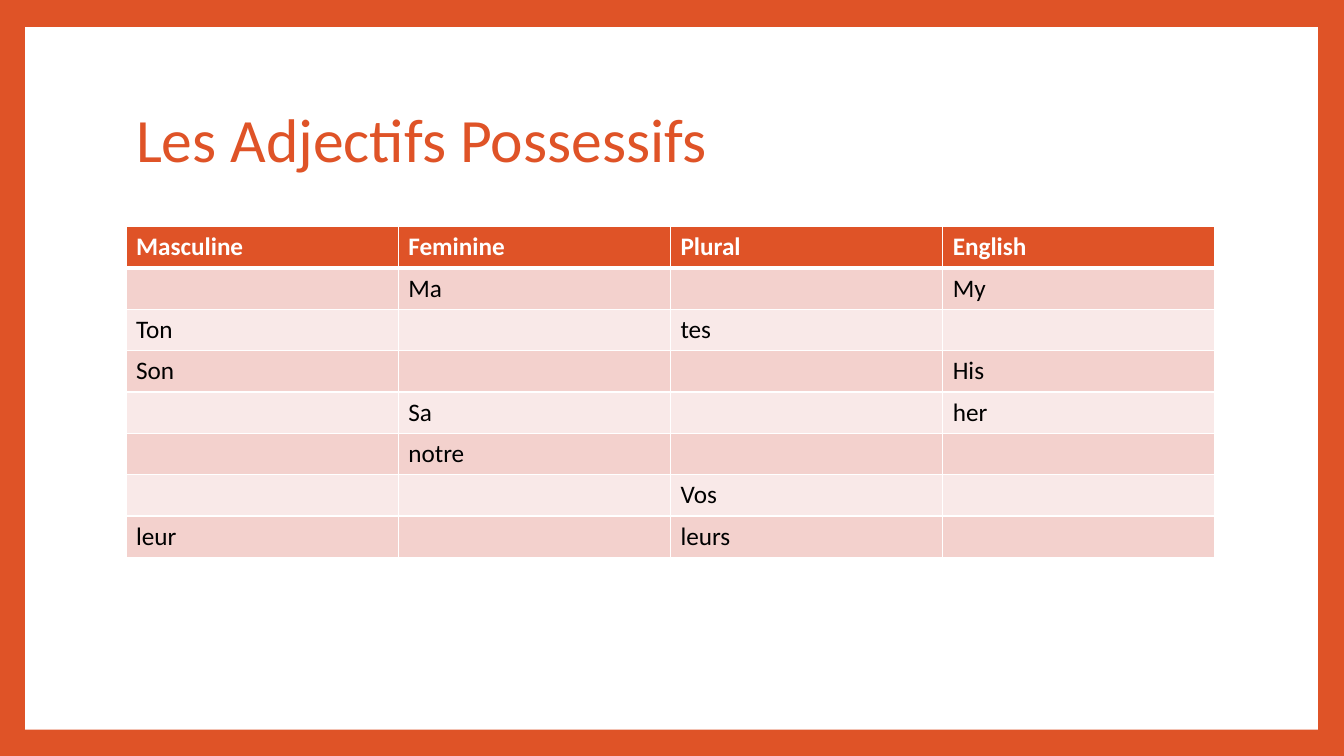
from dataclasses import dataclass

from lxml import etree
from pptx import Presentation
from pptx import util as u
from pptx.dml.color import RGBColor
from pptx.enum import shapes, text
from pptx.oxml.ns import qn


@dataclass(frozen=True)
class Theme:
    font: str = "Calibri"
    accent: str = "DF5327"
    white: str = "FFFFFF"
    black: str = "000000"
    bands: tuple = ("F3D1CD", "F9E9E8")
    title_size: int = 44
    cell_size: int = 18
    thin: int = 1
    thick: int = 3


THEME = Theme()

ROWS = [
    ("Masculine", "Feminine", "Plural", "English"),
    ("", "Ma", "", "My"),
    ("Ton", "", "tes", ""),
    ("Son", "", "", "His"),
    ("", "Sa", "", "her"),
    ("", "notre", "", ""),
    ("", "", "Vos", ""),
    ("leur", "", "leurs", ""),
]


def paint(fill, color):
    fill.solid()
    fill.fore_color.rgb = RGBColor.from_string(color)


def style(p, size, color, bold=False):
    p.font.name = THEME.font
    p.font.size = u.Pt(size)
    p.font.bold = bold
    p.font.color.rgb = RGBColor.from_string(color)


def add_panel(s, left, top, width, height):
    sp = s.shapes.add_shape(shapes.MSO_SHAPE.RECTANGLE, left, top, width, height)
    sp.shadow.inherit = False
    paint(sp.fill, THEME.white)
    sp.line.fill.background()
    # Send the panel behind the title
    s.shapes.element.insert(2, sp.element)


def set_title(s, words, left, top, width, height):
    title = s.shapes.title
    title.left, title.top, title.width, title.height = left, top, width, height
    tf = title.text_frame
    tf.text = words
    tf.word_wrap = True
    tf.vertical_anchor = text.MSO_ANCHOR.MIDDLE
    p = tf.paragraphs[0]
    p.alignment = text.PP_ALIGN.LEFT
    p.line_spacing = 0.9
    style(p, THEME.title_size, THEME.accent)


def add_border(cell, side, width):
    ln = etree.SubElement(cell._tc.get_or_add_tcPr(), qn("a:ln" + side),
                          w=str(u.Pt(width)))
    fill = etree.SubElement(ln, qn("a:solidFill"))
    etree.SubElement(fill, qn("a:srgbClr"), val=THEME.white)


def fill_cell(cell, words, row):
    header = row == 0
    # The line under the header is shared by the first two rows
    thick_side = {0: "B", 1: "T"}.get(row)
    for side in "LRTB":
        add_border(cell, side, THEME.thick if side == thick_side else THEME.thin)
    paint(cell.fill, THEME.accent if header else THEME.bands[(row - 1) % 2])
    cell.text = words
    style(cell.text_frame.paragraphs[0], THEME.cell_size,
          THEME.white if header else THEME.black, header)


def add_grid(s, rows, left, top, width, row_height):
    table = s.shapes.add_table(len(rows), len(rows[0]), left, top, width,
                               row_height * len(rows)).table
    for i, row in enumerate(rows):
        table.rows[i].height = row_height
        for j, words in enumerate(row):
            fill_cell(table.cell(i, j), words, i)


def main():
    prs = Presentation()
    prs.slide_width, prs.slide_height = u.Inches(13.33), u.Inches(7.5)
    s = prs.slides.add_slide(prs.slide_layouts[5])

    # Coloured frame around a white panel
    paint(s.background.fill, THEME.accent)
    add_panel(s, u.Inches(0.25), u.Inches(0.27), u.Inches(12.82), u.Inches(6.97))

    # Title and table share the same margins
    left, width = u.Inches(1.25), u.Inches(10.8)
    set_title(s, "Les Adjectifs Possessifs", left, u.Inches(0.67), width,
              u.Inches(1.48))
    add_grid(s, ROWS, left, u.Inches(2.25), width, u.Inches(0.41))

    prs.save("out.pptx")


if __name__ == "__main__":
    main()
